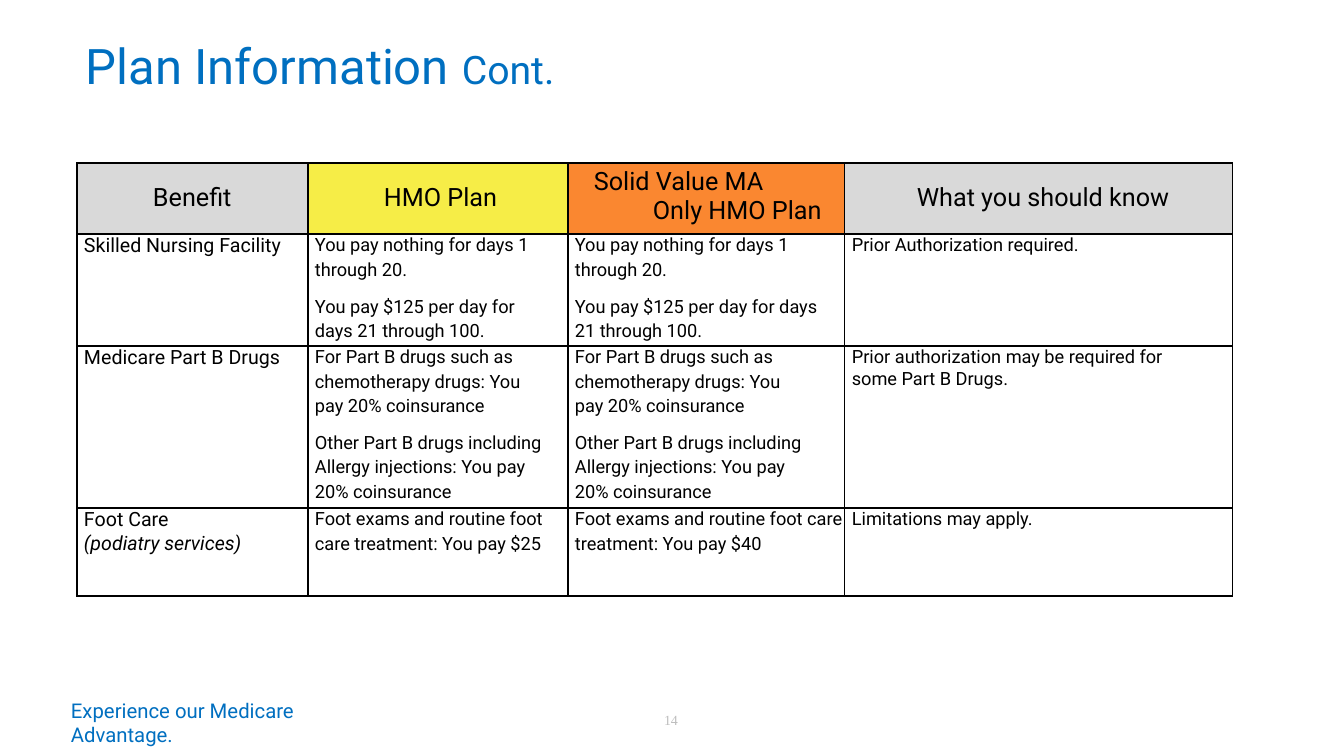
import pptx
import pptx.dml.color
import pptx.enum.text
import pptx.oxml
import pptx.oxml.ns
import pptx.util

PIXELS_PER_INCH = 100.8
FONT = "Roboto"
BLUE, BLACK, WHITE, GRAY = "006FC0", "000000", "FFFFFF", "D9D9D9"
COLUMN_WIDTHS = [231, 260, 277, 388]
ROW_HEIGHTS = [71, 112, 162, 88]
HEADERS = [
    (["Benefit"], GRAY, 76, 0, 20),
    (["HMO Plan"], "F6ED47", 76, 0, 20),
    (["Solid Value MA", "Only HMO Plan"], "FA8730", 85, -59, 4),
    (["What you should know"], GRAY, 72, 0, 20),
]
NURSING = ["You pay nothing for days 1", "through 20.",
           "You pay $125 per day for days 21 through 100."]
DRUGS = ["For Part B drugs such as",
         "chemotherapy drugs: You pay 20% coinsurance",
         "Other Part B drugs including Allergy injections: You pay 20% coinsurance"]
BENEFITS = [
    (["Skilled Nursing Facility"], (NURSING, 20), (NURSING, 20),
     "Prior Authorization required."),
    (["Medicare Part B Drugs"], (DRUGS, 20), (DRUGS, 40),
     "Prior authorization may be required for some Part B Drugs."),
    (["Foot Care ", "(podiatry services)"],
     (["Foot exams and routine foot", "care treatment: You pay $25"], 20),
     (["Foot exams and routine foot care", "treatment: You pay $40"], 0),
     "Limitations may apply."),
]


def px(length):
    return pptx.util.Emu(round(length * 914400 / PIXELS_PER_INCH))


def color(value):
    return pptx.dml.color.RGBColor.from_string(value)


def add_run(paragraph, text, size, fill=BLACK, font=FONT, italic=False):
    run = paragraph.add_run()
    run.text = text
    run.font.name = font
    run.font.size = pptx.util.Pt(size)
    run.font.italic = italic
    run.font.color.rgb = color(fill)


def indent(paragraph, left, first=0):
    properties = paragraph._p.get_or_add_pPr()
    properties.set("marL", str(px(left)))
    properties.set("indent", str(px(first)))


def add_text(slide, box, runs, font=FONT, left=0, line_spacing=None):
    shape = slide.shapes.add_textbox(*map(px, box))
    frame = shape.text_frame
    frame.word_wrap = True
    frame.margin_left = frame.margin_top = frame.margin_right = frame.margin_bottom = 0
    paragraph = frame.paragraphs[0]
    indent(paragraph, left)
    if line_spacing:
        paragraph.line_spacing = pptx.util.Pt(line_spacing)
    for text, size, fill in runs:
        add_run(paragraph, text, size, fill, font)


def style_cell(cell, fill, top=0, right=0):
    cell.margin_left = cell.margin_bottom = 0
    cell.margin_top, cell.margin_right = px(top), px(right)
    cell.vertical_anchor = pptx.enum.text.MSO_ANCHOR.TOP
    properties = cell._tc.get_or_add_tcPr()
    for side in ("lnL", "lnR", "lnT", "lnB"):
        properties.append(pptx.oxml.parse_xml(
            f'<a:{side} {pptx.oxml.ns.nsdecls("a")} w="12700"><a:solidFill>'
            f'<a:srgbClr val="{BLACK}"/></a:solidFill></a:{side}>'))
    cell.fill.solid()
    cell.fill.fore_color.rgb = color(fill)


def fill_header(cell, lines, fill, left, first, top):
    style_cell(cell, fill, top)
    paragraph = cell.text_frame.paragraphs[0]
    indent(paragraph, left, first)
    for number, line in enumerate(lines):
        if number:
            paragraph.add_line_break()
        add_run(paragraph, line, 18)


def fill_line(cell, parts, size, line_spacing, right):
    style_cell(cell, WHITE, right=right)
    paragraph = cell.text_frame.paragraphs[0]
    indent(paragraph, 7)
    paragraph.line_spacing = pptx.util.Pt(line_spacing)
    for number, part in enumerate(parts):
        add_run(paragraph, part, size, italic=number > 0)


def fill_cost(cell, texts, right):
    style_cell(cell, WHITE, 1, right)
    frame = cell.text_frame
    for number, text in enumerate(texts):
        paragraph = frame.add_paragraph() if number else frame.paragraphs[0]
        indent(paragraph, 7)
        if number:
            paragraph.line_spacing = 1.15
        if number == 2:
            paragraph.space_before = pptx.util.Pt(9.3)
        add_run(paragraph, text, 13)


def add_benefit_table(slide, left, top):
    box = (left, top, sum(COLUMN_WIDTHS), sum(ROW_HEIGHTS))
    table = slide.shapes.add_table(
        len(ROW_HEIGHTS), len(COLUMN_WIDTHS), *map(px, box)).table
    table.first_row = table.horz_banding = False
    for column, width in zip(table.columns, COLUMN_WIDTHS):
        column.width = px(width)
    for row, height in zip(table.rows, ROW_HEIGHTS):
        row.height = px(height)
    for column, header in enumerate(HEADERS):
        fill_header(table.cell(0, column), *header)
    for row, (label, hmo, value, note) in enumerate(BENEFITS, 1):
        fill_line(table.cell(row, 0), label, 14, 16.8, 65 if len(label) > 1 else 0)
        fill_cost(table.cell(row, 1), *hmo)
        fill_cost(table.cell(row, 2), *value)
        fill_line(table.cell(row, 3), [note], 13, 15.6, 60)


def add_plan_slide(presentation):
    slide = presentation.slides.add_slide(presentation.slide_layouts[6])
    add_text(slide, (72, 36, 884, 80),
             [("Plan Information ", 35, BLUE), ("Cont.", 28, BLUE)], left=14)
    add_benefit_table(slide, 77, 163)
    add_text(slide, (70, 698, 300, 48),
             [("Experience our Medicare Advantage.", 14.5, BLUE)],
             left=1, line_spacing=17.3)
    add_text(slide, (660, 712, 24, 18), [("14", 10, "BEBEBE")],
             "Times New Roman", left=4, line_spacing=11.9)


def main():
    presentation = pptx.Presentation()
    presentation.slide_width = px(1344)
    presentation.slide_height = px(756)
    add_plan_slide(presentation)
    presentation.save("out.pptx")


if __name__ == "__main__":
    main()
